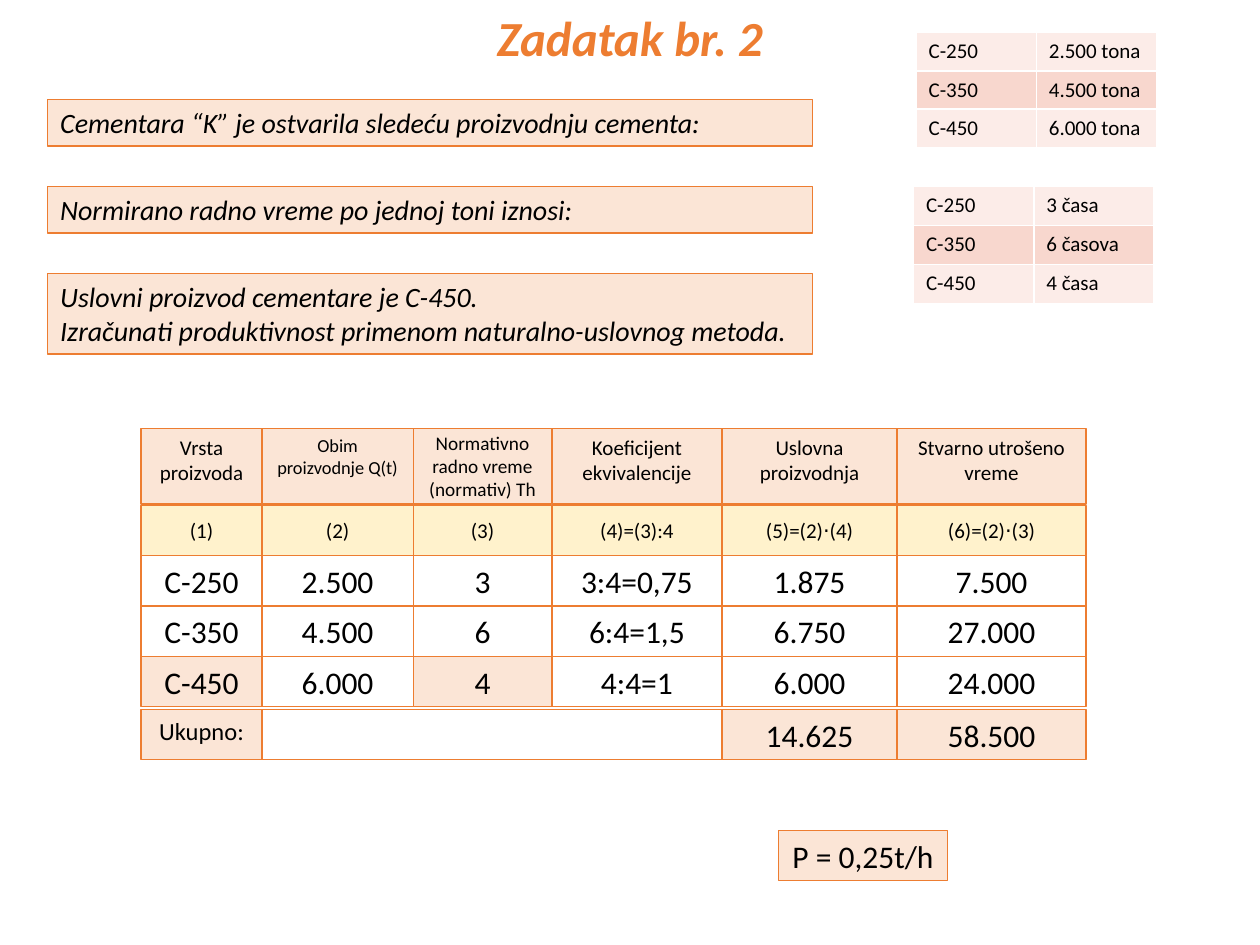
from pptx import Presentation
from pptx.dml.color import RGBColor
from pptx.enum.shapes import MSO_SHAPE
from pptx.enum.text import MSO_ANCHOR, PP_ALIGN
from pptx.util import Inches, Pt

RECTANGLE = MSO_SHAPE.RECTANGLE
TOP, MIDDLE = MSO_ANCHOR.TOP, MSO_ANCHOR.MIDDLE
CENTER, JUSTIFY = PP_ALIGN.CENTER, PP_ALIGN.JUSTIFY
ORANGE = RGBColor(0xED, 0x7D, 0x31)
PEACH = RGBColor(0xFB, 0xE5, 0xD6)
CREAM = RGBColor(0xFF, 0xF2, 0xCC)
LIGHT_BAND = RGBColor(0xFC, 0xEC, 0xE8)
DARK_BAND = RGBColor(0xF8, 0xD7, 0xCE)
BLACK = RGBColor(0, 0, 0)
FONT = "Calibri"


def style_text(frame, size, align=None, color=BLACK, bold=False, italic=False):
    for paragraph in frame.paragraphs:
        paragraph.alignment = align
        for run in paragraph.runs:
            run.font.name = FONT
            run.font.size = Pt(size)
            run.font.color.rgb = color
            run.font.bold = bold
            run.font.italic = italic


def add_box(left, top, width, height, text, size, fill=None,
            align=CENTER, anchor=TOP, italic=False):
    """Add an orange-outlined rectangle; lengths are in inches."""
    box = slide.shapes.add_shape(RECTANGLE, Inches(left), Inches(top),
                                 Inches(width), Inches(height))
    box.shadow.inherit = False
    if fill is None:
        box.fill.background()
    else:
        box.fill.solid()
        box.fill.fore_color.rgb = fill
    box.line.color.rgb = ORANGE
    box.line.width = Pt(0.75)
    frame = box.text_frame
    frame.word_wrap = True
    frame.vertical_anchor = anchor
    frame.text = text
    style_text(frame, size, align, italic=italic)


prs = Presentation()
prs.slide_width, prs.slide_height = Inches(10), Inches(7.5)
slide = prs.slides.add_slide(prs.slide_layouts[5])

title = slide.shapes.title
title.left, title.top = Inches(3.83), Inches(0.01)
title.width, title.height = Inches(2.34), Inches(0.57)
title.text_frame.text = "Zadatak br. 2"
title.text_frame.word_wrap = False
style_text(title.text_frame, 28, CENTER, ORANGE, bold=True, italic=True)

# Task statements
statements = [
    (0.37, "Cementara “K” je ostvarila sledeću proizvodnju cementa: "),
    (0.37, "Normirano radno vreme po jednoj toni iznosi: "),
    (0.64, "Uslovni proizvod cementare je C-450.\n"
           "Izračunati produktivnost primenom naturalno-uslovnog metoda. "),
]
for i, (height, statement) in enumerate(statements):
    add_box(0.38, 0.79 + 0.69 * i, 6.07, height, statement, 16, PEACH,
            align=JUSTIFY, italic=True)

# Given data: output and labour time per cement type
cements = ["C-250", "C-350", "C-450"]
given_data = [
    (7.27, 0.26, 0.3, ["2.500 tona", "4.500 tona", "6.000 tona"]),
    (7.25, 1.48, 0.31, ["3 časa", "6 časova", "4 časa"]),
]
for left, top, row_height, amounts in given_data:
    data = slide.shapes.add_table(3, 2, Inches(left), Inches(top),
                                  Inches(1.91), Inches(3 * row_height)).table
    for r, entry in enumerate(zip(cements, amounts)):
        for c, text in enumerate(entry):
            cell = data.cell(r, c)
            cell.fill.solid()
            cell.fill.fore_color.rgb = DARK_BAND if r % 2 else LIGHT_BAND
            cell.text_frame.text = text
            style_text(cell.text_frame, 12)

# Calculation grid: headings, formulas, one row per cement, totals
edges = [1.12, 2.08, 3.28, 4.38, 5.73, 7.12, 8.62]
HEADING_TOP, HEADING_HEIGHT = 3.4, 0.6
BODY_TOP, ROW = 4.01, 0.4
headings = [
    ("Vrsta proizvoda", 12, TOP),
    ("Obim proizvodnje Q(t)", 10.5, TOP),
    ("Normativno radno vreme (normativ) Th", 11, MIDDLE),
    ("Koeficijent ekvivalencije", 12, TOP),
    ("Uslovna proizvodnja", 12, TOP),
    ("Stvarno utrošeno vreme", 12, TOP),
]
formulas = ["(1)", "(2)", "(3)", "(4)=(3):4", "(5)=(2)⋅(4)", "(6)=(2)⋅(3)"]
results = [
    ["C-250", "2.500", "3", "3:4=0,75", "1.875", "7.500"],
    ["C-350", "4.500", "6", "6:4=1,5", "6.750", "27.000"],
    ["C-450", "6.000", "4", "4:4=1", "6.000", "24.000"],
]
highlighted = {"C-450", "4"}

for c, (left, right) in enumerate(zip(edges, edges[1:])):
    width = right - left
    heading, size, anchor = headings[c]
    add_box(left, HEADING_TOP, width, HEADING_HEIGHT, heading, size, PEACH,
            anchor=anchor)
    add_box(left, BODY_TOP, width, ROW, formulas[c], 12, CREAM, anchor=MIDDLE)
    for r, result in enumerate(results, start=1):
        add_box(left, BODY_TOP + r * ROW, width, ROW, result[c], 18,
                PEACH if result[c] in highlighted else None)

totals = [
    (0, 1, "Ukupno:", 14, PEACH),
    (1, 4, "", 18, None),
    (4, 5, "14.625", 18, PEACH),
    (5, 6, "58.500", 18, PEACH),
]
for first, last, text, size, fill in totals:
    add_box(edges[first], 5.63, edges[last] - edges[first], ROW, text, size, fill)

add_box(6.18, 6.59, 1.34, ROW, "P = 0,25t/h", 18, PEACH)

prs.save("out.pptx")
